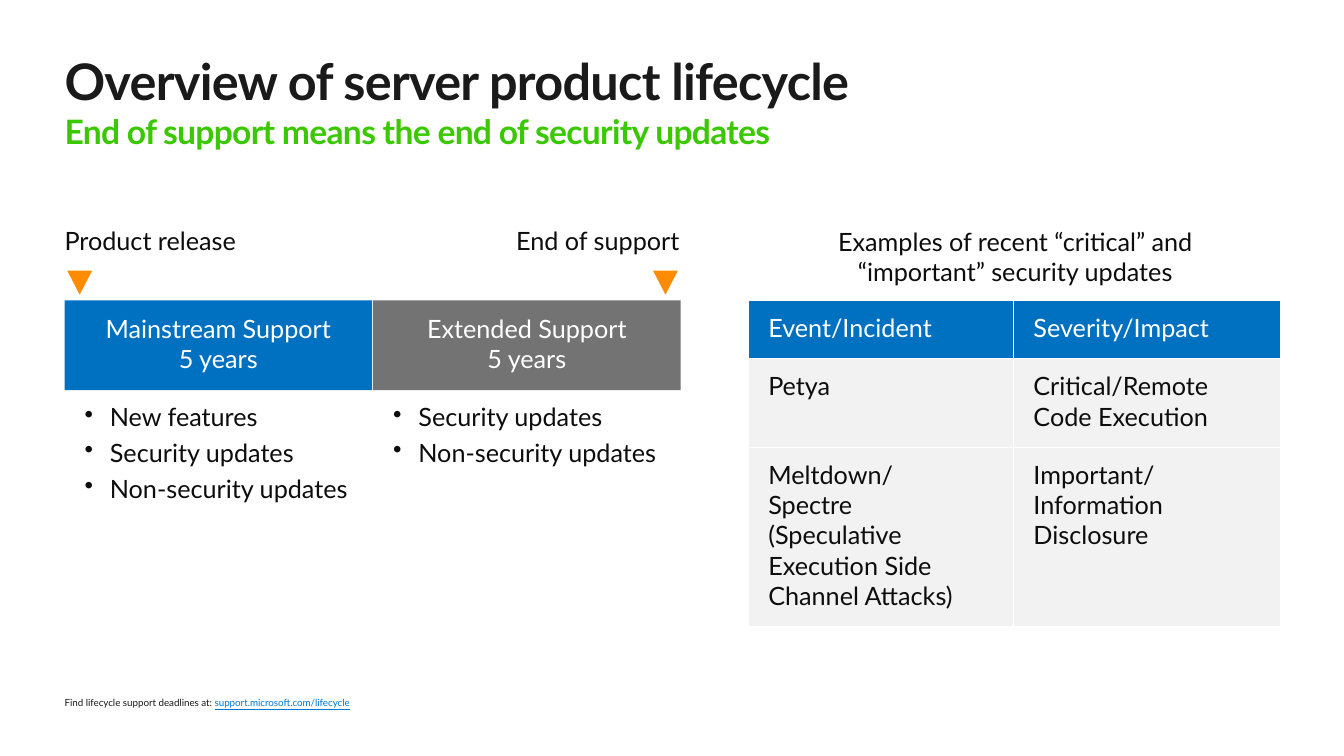
from copy import deepcopy
from dataclasses import dataclass

from lxml import etree
from pptx import Presentation
from pptx import util as u
from pptx.dml.color import RGBColor
from pptx.enum import shapes, text
from pptx.oxml.ns import qn

LEFT, CENTER, RIGHT = (text.PP_ALIGN.LEFT, text.PP_ALIGN.CENTER,
                       text.PP_ALIGN.RIGHT)
TOP, MIDDLE = text.MSO_ANCHOR.TOP, text.MSO_ANCHOR.MIDDLE
SIDES = ("margin_left", "margin_top", "margin_right", "margin_bottom")


@dataclass(frozen=True)
class Theme:
    """Colours, font and type sizes of the slide."""
    font: str = "Lato"
    title: float = 36
    subtitle: float = 24
    body: float = 18
    note: float = 7
    ink: str = "0D0D0D"
    dark: str = "1A1A1A"
    white: str = "FFFFFF"
    green: str = "3AC900"
    blue: str = "0070C0"
    gray: str = "737373"
    light: str = "F2F2F2"
    orange: str = "FF8C00"
    link: str = "0078D4"


class Deck:
    """Draws styled elements on the current slide."""

    def __init__(self, prs, theme):
        """Add a title-only slide."""
        self.theme = theme
        self.s = prs.slides.add_slide(prs.slide_layouts[5])

    def box(self, at):
        """Turn four lengths in inches into a position and size."""
        return [u.Inches(n) for n in at]

    def add_text(self, p, words, size=None, color=None, spacing=None, **fmt):
        """Add text to a paragraph, with a line break at each newline."""
        fmt = {"name": self.theme.font,
               "size": u.Pt(size or self.theme.body), **fmt}
        for i, line in enumerate(words.split("\n")):
            br = p._p.add_br() if i else None
            r = p.add_run()
            r.text = line
            for key, value in fmt.items():
                setattr(r.font, key, value)
            r.font.color.rgb = RGBColor.from_string(color or self.theme.ink)
            if spacing:
                r._r.rPr.set("spc", str(int(spacing * 100)))
            if br is not None:
                br.append(deepcopy(r._r.rPr))

    def fill_text(self, tf, paras, align=LEFT, bullet=False, **fmt):
        """Fill a text frame with strings or lists of (text, format) runs."""
        for i, para in enumerate(paras):
            p = tf.paragraphs[0] if i == 0 else tf.add_paragraph()
            p.alignment = align
            if bullet:
                pPr = p._p.get_or_add_pPr()
                pPr.set("marL", str(u.Inches(0.25)))
                pPr.set("indent", str(-u.Inches(0.25)))
                etree.SubElement(pPr, qn("a:buChar")).set("char", "•")
                p.line_spacing, p.space_after = 0.9, u.Pt(6)
            runs = [(para, {})] if isinstance(para, str) else para
            for words, own in runs:
                self.add_text(p, words, **{**fmt, **own})

    def frame(self, tf, ins=(0, 0, 0, 0), anchor=TOP):
        """Set insets, wrapping and anchor of a text frame."""
        layout = {"word_wrap": True, "vertical_anchor": anchor,
                  "auto_size": text.MSO_AUTO_SIZE.NONE,
                  **dict(zip(SIDES, self.box(ins)))}
        for key, value in layout.items():
            setattr(tf, key, value)
        return tf

    def title(self, at, runs):
        """Place and fill the title placeholder."""
        sp = self.s.shapes.title
        sp.left, sp.top, sp.width, sp.height = self.box(at)
        self.fill_text(self.frame(sp.text_frame), [runs])

    def label(self, at, paras, ins=(0, 0, 0, 0), **fmt):
        """Add a text box."""
        sp = self.s.shapes.add_textbox(*self.box(at))
        self.fill_text(self.frame(sp.text_frame, ins), paras, **fmt)

    def shape(self, kind, at, fill, line=None):
        """Add a filled preset shape."""
        sp = self.s.shapes.add_shape(kind, *self.box(at))
        sp.shadow.inherit = False
        sp.fill.solid()
        sp.fill.fore_color.rgb = RGBColor.from_string(fill)
        if line:
            sp.line.color.rgb = RGBColor.from_string(line)
            sp.line.width = u.Pt(2.25)
        else:
            sp.line.fill.background()
        return sp

    def phase(self, at, paras, fill, ins):
        """Add a support phase bar."""
        sp = self.shape(shapes.MSO_SHAPE.RECTANGLE, at, fill)
        self.fill_text(self.frame(sp.text_frame, ins, MIDDLE), paras,
                       align=CENTER, color=self.theme.white)

    def marker(self, at):
        """Add a downward triangle."""
        sp = self.shape(shapes.MSO_SHAPE.ISOSCELES_TRIANGLE, at,
                        self.theme.orange, self.theme.white)
        sp.rotation = 180

    def border(self, cell, side):
        """Draw a thin white line on one side of a cell."""
        ln = etree.SubElement(cell._tc.get_or_add_tcPr(), qn("a:ln" + side))
        ln.set("w", str(u.Pt(1)))
        fill = etree.SubElement(ln, qn("a:solidFill"))
        etree.SubElement(fill, qn("a:srgbClr")).set("val", self.theme.white)

    def table(self, at, cols, heights, rows, ins):
        """Add a table with a coloured header and inner borders."""
        tbl = self.s.shapes.add_table(len(rows), len(cols),
                                      *self.box(at)).table
        tbl.horz_banding = tbl.first_row = False
        for col, width in zip(tbl.columns, cols):
            col.width = u.Inches(width)
        for i, row in enumerate(rows):
            tbl.rows[i].height = u.Inches(heights[i])
            for j, paras in enumerate(row):
                cell = tbl.cell(i, j)
                inner = {"L": j > 0, "R": j < len(cols) - 1,
                         "T": i > 0, "B": i < len(rows) - 1}
                for side, shown in inner.items():
                    if shown:
                        self.border(cell, side)
                for key, value in zip(SIDES, self.box(ins)):
                    setattr(cell, key, value)
                cell.fill.solid()
                cell.fill.fore_color.rgb = RGBColor.from_string(
                    self.theme.light if i else self.theme.blue)
                self.fill_text(cell.text_frame, paras,
                               color=self.theme.ink if i else self.theme.white)


def main():
    """Build the lifecycle slide."""
    prs = Presentation()
    prs.slide_width, prs.slide_height = u.Inches(13.33), u.Inches(7.5)
    t = Theme()
    d = Deck(prs, t)
    left, bar, pad = 0.64, 3.05, (0.2, 0.12, 0.2, 0.16)

    heading = {"bold": True, "spacing": -0.5}
    d.title((left, 0.5, 12.05, 1.01), [
        ("Overview of server product lifecycle\n",
         {"size": t.title, "color": t.dark, **heading}),
        ("End of support means the end of security updates",
         {"size": t.subtitle, "color": t.green, **heading})])

    d.label((left, 2.24, 2.36, 0.3), ["Product release"])
    d.label((4.48, 2.24, 2.26, 0.3), ["End of support"], align=RIGHT)
    for x in (left, 6.45):
        d.marker((x, 2.67, 0.3, 0.29))

    phases = [
        ("Mainstream Support", t.blue, 3.4,
         ["New features", "Security updates", "Non-security updates"]),
        ("Extended Support", t.gray, 3.09,
         ["Security updates", "Non-security updates"])]
    for i, (name, fill, width, items) in enumerate(phases):
        x = left + i * (bar + 0.01)
        d.phase((x, 2.98, bar, 0.89), [name, "5 years"], fill, pad)
        d.label((x, 3.86, width, 1.21), items, (0.2, 0.16, 0.2, 0.16),
                bullet=True)

    d.label((7.44, 2.24, 5.26, 0.88),
            ["Examples of recent “critical” and\n“important” security updates"],
            align=CENTER)
    d.table((7.42, 2.98, 5.28, 3.24), (2.63, 2.65), (0.58, 0.88, 1.78), [
        (["Event/Incident"], ["Severity/Impact"]),
        (["Petya"], ["Critical/Remote Code Execution"]),
        (["Meltdown/", "Spectre",
          "(Speculative Execution Side Channel Attacks)"],
         ["Important/\nInformation Disclosure"])], pad)

    d.label((left, 6.86, 10.98, 0.22), [[
        ("Find lifecycle support deadlines at: ", {}),
        ("support.microsoft.com/lifecycle",
         {"color": t.link, "underline": True})]],
        (0, 0.05, 0.1, 0.05), size=t.note, color=t.dark)
    prs.save("out.pptx")


if __name__ == "__main__":
    main()
